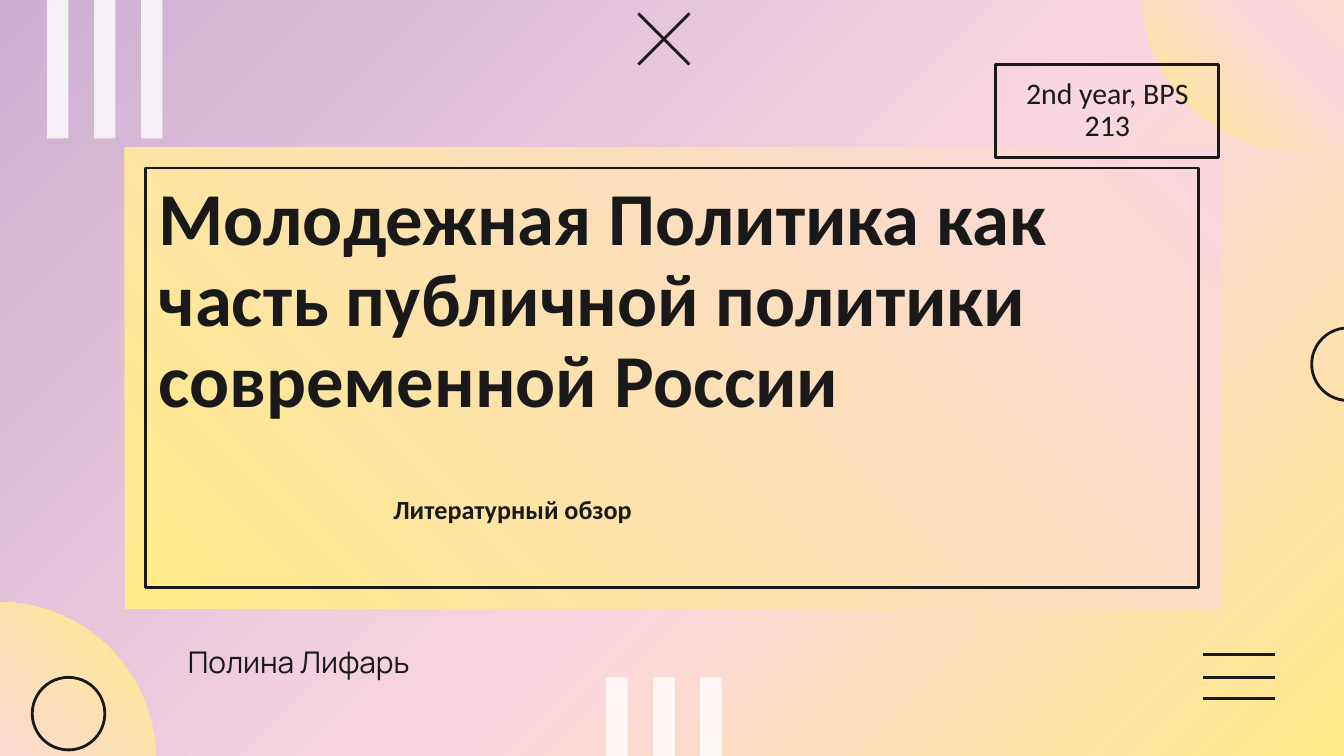
from dataclasses import dataclass

from lxml import etree
from pptx import Presentation
from pptx.dml.color import RGBColor
from pptx.enum.shapes import MSO_CONNECTOR, MSO_SHAPE
from pptx.enum.text import MSO_ANCHOR, MSO_AUTO_SIZE, PP_ALIGN
from pptx.oxml.ns import qn
from pptx.util import Inches, Pt

RECTANGLE, OVAL = MSO_SHAPE.RECTANGLE, MSO_SHAPE.OVAL
STRAIGHT = MSO_CONNECTOR.STRAIGHT
TOP, MIDDLE = MSO_ANCHOR.TOP, MSO_ANCHOR.MIDDLE
LEFT, CENTER = PP_ALIGN.LEFT, PP_ALIGN.CENTER
NO_FIT, GROW = MSO_AUTO_SIZE.NONE, MSO_AUTO_SIZE.SHAPE_TO_FIT_TEXT


@dataclass(frozen=True)
class Theme:
    ink: str = "191919"
    white: str = "FFFFFF"
    bar_alpha: int = 80000
    backdrop: tuple = ((0, "FFEA88"), (42, "FAD7E0"), (100, "CEAED3"))
    disc: tuple = ((0, "FFEA88"), (42, "FAD7E0"), (100, "FFEA88"))
    panel: tuple = ((0, "FFEA88"), (100, "FAD7E0"))
    font: str = "Calibri"
    author_font: str = "Manrope"
    title_size: int = 40
    label_size: int = 16
    note_size: int = 14
    stroke: float = 1.5


THEME = Theme()
INK = RGBColor.from_string(THEME.ink)


def paint_gradient(fill, element, stops):
    """Fill along the diagonal; element is the XML that holds the fill."""
    fill.gradient()
    fill.gradient_angle = 135
    stop_list = next(element.iter(qn("a:gsLst")))
    for old_stop in list(stop_list):
        stop_list.remove(old_stop)
    for position, color in stops:
        stop = etree.SubElement(stop_list, qn("a:gs"), pos=str(position * 1000))
        etree.SubElement(stop, qn("a:srgbClr"), val=color)


def write_text(shape, text, size, font=THEME.font, bold=False, align=LEFT,
               anchor=TOP, inset=0.1, spacing=1.0, fit=NO_FIT):
    frame = shape.text_frame
    frame.word_wrap = True
    frame.auto_size = fit
    frame.vertical_anchor = anchor
    frame.margin_left = frame.margin_right = Inches(0.1)
    frame.margin_top = frame.margin_bottom = Inches(inset)
    paragraph = frame.paragraphs[0]
    paragraph.alignment = align
    paragraph.line_spacing = spacing
    run = paragraph.add_run()
    run.text = text
    run.font.size = Pt(size)
    run.font.name = font
    run.font.bold = bold
    run.font.color.rgb = INK


prs = Presentation()
prs.slide_width = Inches(10)
prs.slide_height = prs.slide_width * 9 // 16
slide = prs.slides.add_slide(prs.slide_layouts[5])
shapes = slide.shapes
paint_gradient(slide.background.fill, slide.element, THEME.backdrop)

# Gradient discs in the corners and the panel behind the title
for kind, left, top, width, height, stops in (
    (OVAL, 8.5, -1.22, 2.34, 2.34, THEME.disc),
    (OVAL, -1.18, 4.48, 2.34, 2.34, THEME.disc),
    (RECTANGLE, 0.93, 1.1, 8.15, 3.43, THEME.panel),
):
    panel = shapes.add_shape(kind, Inches(left), Inches(top), Inches(width), Inches(height))
    panel.shadow.inherit = False
    panel.line.fill.background()
    paint_gradient(panel.fill, panel.element, stops)
    panel.element.spPr.find(qn("a:xfrm")).set("flipH", "1")

# Outlined rings
for left, top in ((9.76, 2.44), (0.24, 5.04)):
    ring = shapes.add_shape(OVAL, Inches(left), Inches(top), Inches(0.54), Inches(0.54))
    ring.shadow.inherit = False
    ring.fill.background()
    ring.line.color.rgb = INK
    ring.line.width = Pt(THEME.stroke)

# Translucent bars in threes
for first_left, top, height in ((4.51, 5.04, 1.75), (0.35, -0.29, 1.32)):
    for column in range(3):
        bar = shapes.add_shape(RECTANGLE, Inches(first_left + 0.35 * column), Inches(top),
                               Inches(0.16), Inches(height))
        bar.shadow.inherit = False
        bar.line.fill.background()
        bar.fill.solid()
        bar.fill.fore_color.rgb = RGBColor.from_string(THEME.white)
        bar_color = next(bar.element.spPr.iter(qn("a:srgbClr")))
        etree.SubElement(bar_color, qn("a:alpha"), val=str(THEME.bar_alpha))

# Menu lines and the cross
menu_lines = [(8.95, y, 9.49, y) for y in (4.87, 5.04, 5.2)]
cross_lines = [(4.75, 0.48, 5.13, 0.1), (5.13, 0.48, 4.75, 0.1)]
for ends in menu_lines + cross_lines:
    stroke = shapes.add_connector(STRAIGHT, *map(Inches, ends))
    stroke.line.color.rgb = INK
    stroke.line.width = Pt(THEME.stroke)
    etree.SubElement(stroke.element.spPr, qn("a:effectLst"))

# Title, stacked directly above its panel
title = shapes.title
panel.element.addnext(title.element)
title.left, title.top = Inches(1.08), Inches(1.25)
title.width, title.height = Inches(7.84), Inches(3.12)
title.line.color.rgb = INK
title.line.width = Pt(THEME.stroke)
write_text(title, "Молодежная Политика как часть публичной политики современной России",
           THEME.title_size, bold=True, spacing=0.9)

author = shapes.add_textbox(Inches(1.3), Inches(4.69), Inches(5.03), Inches(0.44))
write_text(author, "Полина Лифарь", THEME.label_size, font=THEME.author_font)

course = shapes.add_shape(RECTANGLE, Inches(7.41), Inches(0.48), Inches(1.66), Inches(0.69))
course.shadow.inherit = False
course.fill.background()
course.line.color.rgb = INK
course.line.width = Pt(THEME.stroke)
write_text(course, "2nd year, BPS 213", THEME.label_size, align=CENTER, anchor=MIDDLE,
           spacing=0.9, fit=GROW)

review = shapes.add_textbox(Inches(1.48), Inches(3.62), Inches(4.67), Inches(0.55))
write_text(review, "Литературный обзор", THEME.note_size, bold=True, align=CENTER, inset=0.05)

prs.save("out.pptx")
